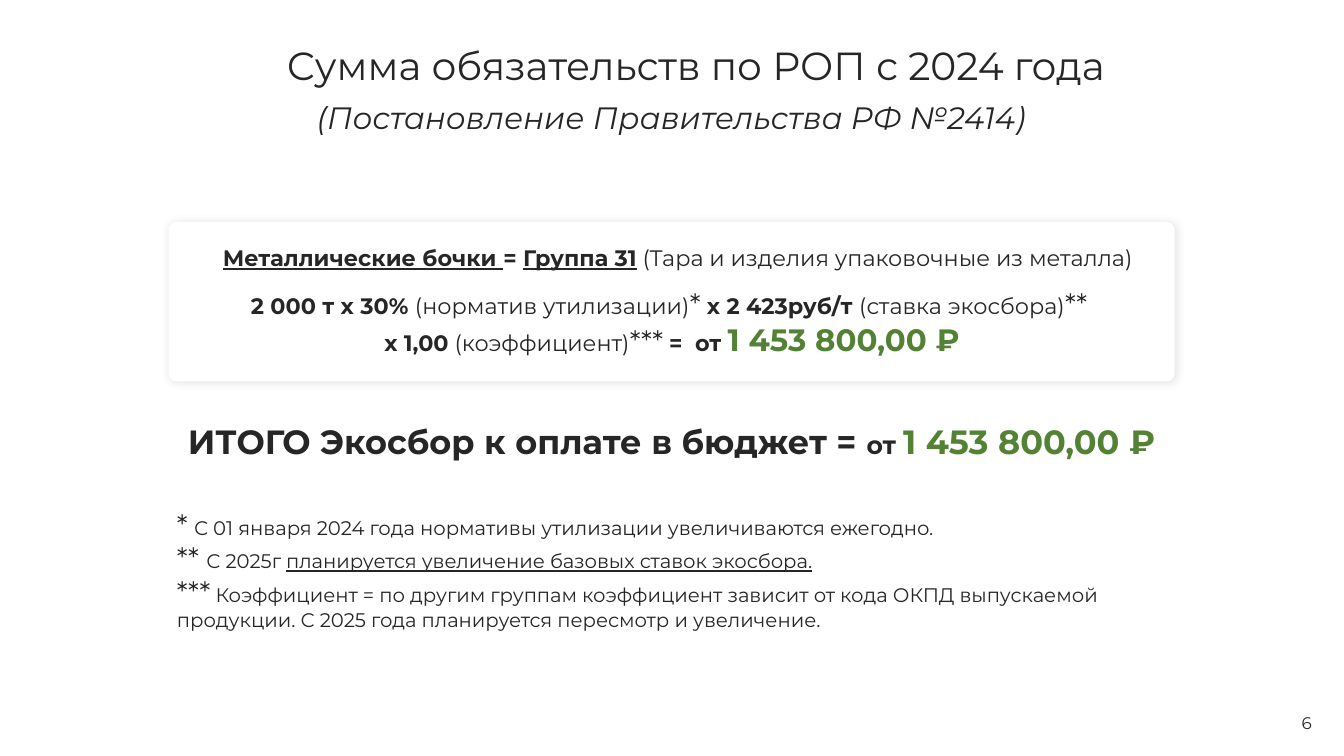
from lxml.etree import SubElement
from pptx import Presentation
from pptx.dml.color import RGBColor
from pptx.enum.shapes import MSO_SHAPE as Shape
from pptx.enum.text import MSO_ANCHOR as Anchor, MSO_AUTO_SIZE as AutoSize, PP_ALIGN as Align
from pptx.oxml.ns import qn
from pptx.util import Inches, Pt

GREEN = "548235"
AMOUNT = "1 453 800,00 ₽"
BOLD = dict(bold=True)
NOTE = dict(size=16.6)
STAR = dict(size=23.7)


def rgb(value):
    return RGBColor.from_string(value)


def write(paragraph, text, size=18.9, color="262626", font="Montserrat",
          bold=False, italic=False, underline=False):
    run = paragraph.add_run()
    run.text = text
    style = run.font
    style.name, style.size, style.color.rgb = font, Pt(size), rgb(color)
    style.bold, style.italic, style.underline = bold, italic, underline


class Deck:
    """Holds the slide style and the slide being built."""

    def __init__(self, width, height):
        self.deck = Presentation()
        self.deck.slide_width, self.deck.slide_height = Inches(width), Inches(height)
        self.slide = self.deck.slides.add_slide(self.deck.slide_layouts[5])
        background = self.slide.background.fill
        background.solid()
        background.fore_color.rgb = rgb("FFFFFF")

    def fill_frame(self, frame, paragraphs, align, anchor):
        frame.word_wrap = True
        frame.auto_size = AutoSize.NONE
        frame.vertical_anchor = anchor
        for index, lines in enumerate(paragraphs):
            paragraph = frame.add_paragraph() if index else frame.paragraphs[0]
            paragraph.alignment = align
            for number, line in enumerate(lines):
                if number:
                    paragraph.add_line_break()
                for text, style in line:
                    write(paragraph, text, **style)

    def title(self, box, text, size):
        heading = self.slide.shapes.title
        heading.left, heading.top, heading.width, heading.height = map(Inches, box)
        self.fill_frame(heading.text_frame, [[[(text, dict(size=size))]]],
                        Align.CENTER, Anchor.BOTTOM)
        heading.text_frame.paragraphs[0].line_spacing = 0.9

    def text(self, box, *paragraphs, align=Align.CENTER, anchor=Anchor.TOP):
        area = self.slide.shapes.add_textbox(*map(Inches, box))
        self.fill_frame(area.text_frame, paragraphs, align, anchor)

    def card(self, box, radius):
        card = self.slide.shapes.add_shape(Shape.ROUNDED_RECTANGLE, *map(Inches, box))
        card.adjustments[0] = radius
        card.fill.solid()
        card.fill.fore_color.rgb = rgb("FFFFFF")
        card.line.fill.background()
        card.shadow.inherit = False
        effects = card._element.spPr.find(qn("a:effectLst"))
        shadow = SubElement(effects, qn("a:outerShdw"), blurRad=str(Pt(8)), dist="0",
                            dir="0", algn="ctr", rotWithShape="0")
        tone = SubElement(shadow, qn("a:srgbClr"), val="000000")
        SubElement(tone, qn("a:alpha"), val="11000")


def main():
    page = Deck(15.79, 8.88)
    page.title((0.7, 0.5, 14.95, 0.6), "Сумма обязательств по РОП с 2024 года", 33.1)
    page.text((2.91, 1.11, 9.96, 0.54),
              [[("(Постановление Правительства РФ №2414)", dict(size=26.1, italic=True))]])

    page.card((1.98, 2.61, 11.82, 1.87), 0.048)
    page.text((2.26, 2.82, 11.41, 0.42), [[
        ("Металлические бочки ", dict(bold=True, underline=True)),
        ("= ", BOLD),
        ("Группа 31", dict(bold=True, underline=True)),
        (" (Тара и изделия упаковочные из металла)", {}),
    ]])
    page.text((2.55, 3.32, 10.69, 0.94), [
        [("2 000 т х 30% ", BOLD), ("(норматив утилизации)", {}), ("*", STAR),
         (" х 2 423руб/т ", BOLD), ("(ставка экосбора)", {}), ("**", STAR), (" ", {})],
        [("х 1,00", BOLD), (" (коэффициент)", {}), ("***", STAR), (" ", {}),
         ("=  от ", BOLD), (AMOUNT, dict(size=26.1, color=GREEN, bold=True))],
    ])

    page.text((1.9, 4.9, 11.98, 0.58), [[
        ("ИТОГО Экосбор к оплате в бюджет = ", dict(size=28.4, bold=True)),
        ("от ", dict(size=21.3, bold=True)),
        (AMOUNT, dict(size=28.4, color=GREEN, bold=True)),
    ]])

    page.text(
        (1.98, 5.91, 11.82, 1.58),
        [[("*", STAR), (" ", BOLD),
          ("С 01 января 2024 года нормативы утилизации увеличиваются ежегодно.", NOTE)]],
        [[("** ", STAR), ("С 2025г ", NOTE),
          ("планируется увеличение базовых ставок экосбора.",
           dict(size=16.6, underline=True))]],
        [[("***", STAR),
          (" Коэффициент = по другим группам коэффициент зависит от кода ОКПД "
           "выпускаемой продукции. С 2025 года планируется пересмотр и увеличение.", NOTE)]],
        align=Align.LEFT)
    page.text((12.04, 8.25, 3.47, 0.47), [[("6", dict(size=14.2))]],
              align=Align.RIGHT, anchor=Anchor.MIDDLE)
    page.deck.save("out.pptx")


if __name__ == "__main__":
    main()
